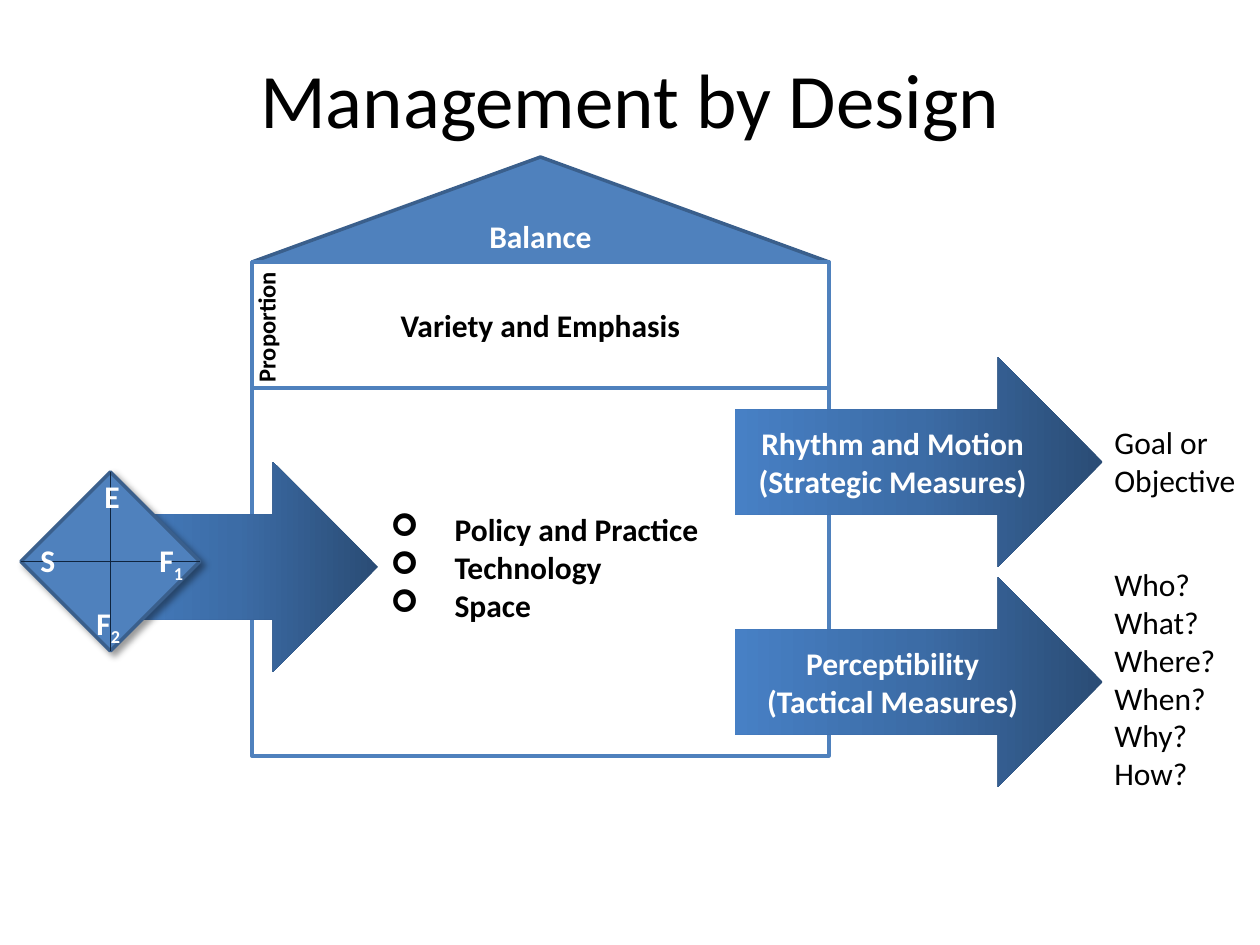
from copy import deepcopy

from lxml.etree import SubElement
from pptx import Presentation
from pptx.dml.color import RGBColor
from pptx.enum.shapes import MSO_CONNECTOR, MSO_SHAPE
from pptx.enum.text import MSO_ANCHOR, MSO_AUTO_SIZE, PP_ALIGN
from pptx.oxml.ns import qn
from pptx.util import Pt

PX = 914400 / 126

BLACK = RGBColor(0x00, 0x00, 0x00)
WHITE = RGBColor(0xFF, 0xFF, 0xFF)
BLUE = RGBColor(0x4F, 0x81, 0xBD)
EDGE_BLUE = RGBColor(0x3A, 0x5F, 0x8C)
NAVY = RGBColor(0x0F, 0x24, 0x3E)
ARROW_STOPS = [
    (0, RGBColor(0x2A, 0x4C, 0x75)),
    (0.5, RGBColor(0x3C, 0x6C, 0xA6)),
    (1, RGBColor(0x47, 0x80, 0xC5)),
]

HOUSE_LEFT, HOUSE_WIDTH = 252, 577
OUTPUT_LEFT = 735
ANSWER_LEFT = 1102


def emu(*lengths):
    return [round(length * PX) for length in lengths]


def format_text(text_frame, size, color, bold=False, align=PP_ALIGN.LEFT):
    for paragraph in text_frame.paragraphs:
        paragraph.alignment = align
        for run in paragraph.runs:
            run.font.name = "Calibri"
            run.font.size = Pt(size)
            run.font.bold = bold
            run.font.color.rgb = color


def add_block(slide, preset, box, text="", text_color=WHITE, fill=None, line=None):
    shape = slide.shapes.add_shape(preset, *emu(*box))
    shape.shadow.inherit = False
    if fill is None:
        shape.fill.background()
    else:
        shape.fill.solid()
        shape.fill.fore_color.rgb = fill
    if line is None:
        shape.line.fill.background()
    else:
        shape.line.color.rgb = line
        shape.line.width = Pt(2)
    if text:
        shape.text_frame.text = text
        shape.text_frame.vertical_anchor = MSO_ANCHOR.MIDDLE
        format_text(shape.text_frame, 18, text_color, True, PP_ALIGN.CENTER)
    return shape


def add_arrow(slide, box, text=""):
    """Add a right arrow that darkens towards its head."""
    shape = add_block(slide, MSO_SHAPE.RIGHT_ARROW, box, text)
    shape.fill.gradient()
    shape.fill.gradient_angle = 180
    stop_list = shape._element.spPr.find(qn("a:gradFill")).find(qn("a:gsLst"))
    stop_list.append(deepcopy(stop_list[0]))
    for stop, (position, color) in zip(shape.fill.gradient_stops, ARROW_STOPS):
        stop.position = position
        stop.color.rgb = color


def add_drop_shadow(shape):
    effects = shape._element.spPr.find(qn("a:effectLst"))
    shadow = SubElement(effects, qn("a:outerShdw"), blurRad=str(Pt(4)),
                        dist=str(Pt(3)), dir="2700000", algn="tl", rotWithShape="0")
    color = SubElement(shadow, qn("a:srgbClr"), val=str(BLACK))
    SubElement(color, qn("a:alpha"), val="40000")


def add_label(slide, box, text, color=BLACK, size=18, bold=False, subscript=""):
    label = slide.shapes.add_textbox(*emu(*box))
    text_frame = label.text_frame
    text_frame.text = text
    text_frame.word_wrap = False
    text_frame.auto_size = MSO_AUTO_SIZE.SHAPE_TO_FIT_TEXT
    if subscript:
        run = text_frame.paragraphs[0].add_run()
        run.text = subscript
        run.font._element.set("baseline", "-25000")
    format_text(text_frame, size, color, bold)
    return label


def add_line(slide, *ends):
    line = slide.shapes.add_connector(MSO_CONNECTOR.STRAIGHT, *emu(*ends))
    line.line.color.rgb = NAVY
    line.line.width = Pt(0.75)
    SubElement(line._element.spPr, qn("a:effectLst"))


def place(shape, box):
    shape.left, shape.top, shape.width, shape.height = emu(*box)


def fill_title(slide):
    title = slide.shapes.title
    place(title, (0, 38, 1260, 120))
    title.text_frame.text = "Management by Design"
    title.text_frame.vertical_anchor = MSO_ANCHOR.MIDDLE
    format_text(title.text_frame, 44, BLACK, align=PP_ALIGN.CENTER)


def fill_list(slide, box, items):
    body = slide.placeholders[1]
    place(body, box)
    text_frame = body.text_frame
    text_frame.text = "\n".join(items)
    text_frame.word_wrap = False
    text_frame.auto_size = MSO_AUTO_SIZE.SHAPE_TO_FIT_TEXT
    indent = emu(64)[0]
    for paragraph in text_frame.paragraphs:
        paragraph.space_before = Pt(0)
        properties = paragraph._p.get_or_add_pPr()
        properties.set("marL", str(indent))
        properties.set("indent", str(-indent))
        SubElement(properties, qn("a:buFont"), typeface="Wingdings")
        SubElement(properties, qn("a:buChar"), char="➢")
    format_text(text_frame, 18, BLACK, True)


def add_house(slide):
    def floor(top, height):
        return HOUSE_LEFT, top, HOUSE_WIDTH, height

    add_block(slide, MSO_SHAPE.RECTANGLE, floor(388, 368), line=BLUE)
    add_block(slide, MSO_SHAPE.ISOSCELES_TRIANGLE, floor(157, 105), "Balance",
              fill=BLUE, line=EDGE_BLUE)
    add_block(slide, MSO_SHAPE.RECTANGLE, floor(262, 126), "Variety and Emphasis",
              BLACK, line=BLUE)
    add_label(slide, (198, 305, 137, 43), "Proportion", size=14, bold=True).rotation = 270


def add_compass(slide):
    """Add the diamond with its cross and four letters."""
    left, top, side = 21, 472, 179
    diamond = add_block(slide, MSO_SHAPE.DIAMOND, (left, top, side, side),
                        fill=BLUE, line=EDGE_BLUE)
    add_drop_shadow(diamond)
    middle_x, middle_y = left + side / 2, top + side / 2
    add_line(slide, middle_x, top, middle_x, top + side)
    add_line(slide, left, middle_y, left + side, middle_y)
    letters = [
        (92, 471, 40, "E", ""),
        (147, 535, 50, "F", "1"),
        (84, 598, 50, "F", "2"),
        (28, 535, 40, "S", ""),
    ]
    for x, y, width, letter, subscript in letters:
        add_label(slide, (x, y, width, 50), letter, WHITE, bold=True, subscript=subscript)


def main():
    presentation = Presentation()
    presentation.slide_width, presentation.slide_height = emu(1260, 945)
    slide = presentation.slides.add_slide(presentation.slide_layouts[1])

    fill_title(slide)
    add_house(slide)
    fill_list(slide, (378, 504, 336, 127),
              ["Policy and Practice", "Technology", "Space"])
    add_arrow(slide, (OUTPUT_LEFT, 357, 368, 210),
              "Rhythm and Motion\n(Strategic Measures)")
    add_arrow(slide, (OUTPUT_LEFT, 577, 368, 210),
              "Perceptibility\n(Tactical Measures)")
    add_label(slide, (ANSWER_LEFT, 417, 147, 89), "Goal or\nObjective")
    add_label(slide, (ANSWER_LEFT, 559, 127, 242),
              "Who?\nWhat?\nWhere?\nWhen?\nWhy?\nHow?")
    add_arrow(slide, (94, 462, 284, 210))
    add_compass(slide)

    presentation.save("out.pptx")


if __name__ == "__main__":
    main()
